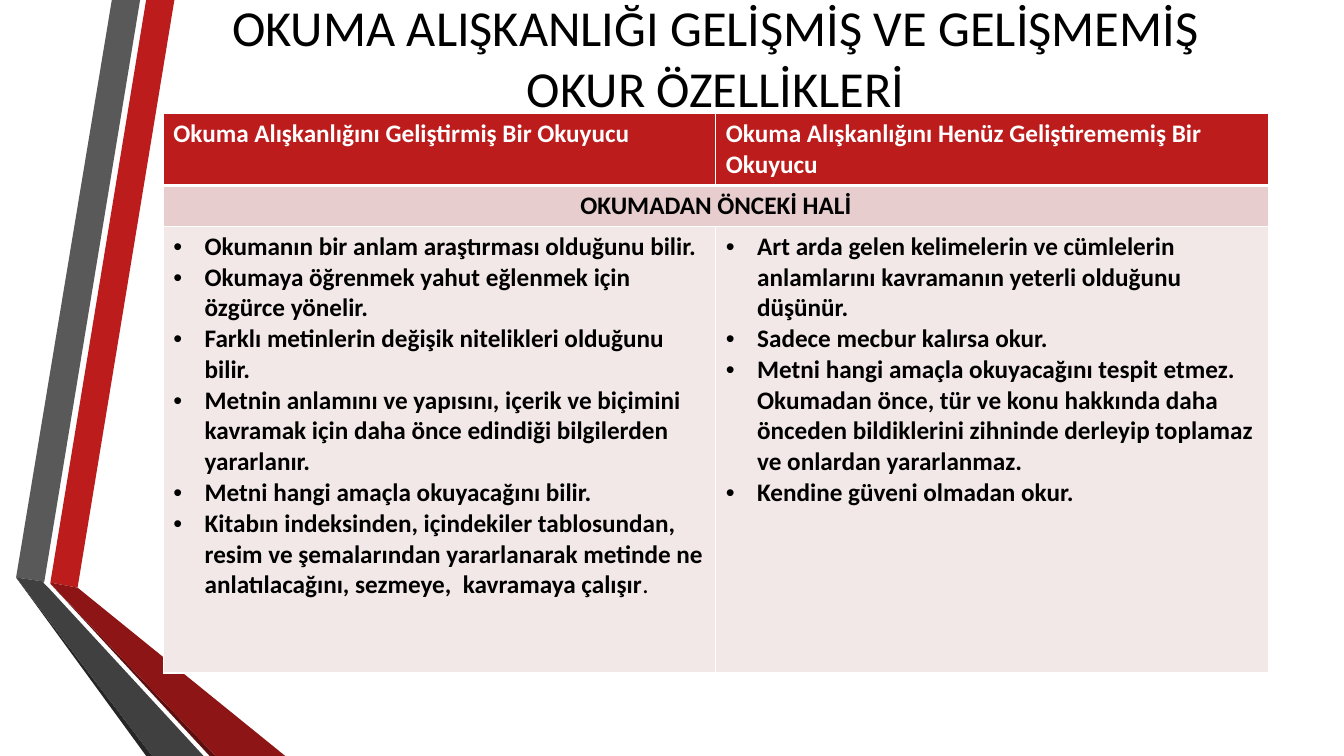
"""Build a slide comparing readers with and without a reading habit."""
import pptx
import pptx.util
import pptx.dml.color
import pptx.enum.text
import pptx.oxml.ns
from lxml import etree

Inches = pptx.util.Inches
Pt = pptx.util.Pt
RGBColor = pptx.dml.color.RGBColor
CENTER = pptx.enum.text.PP_ALIGN.CENTER

BLACK = RGBColor(0x00, 0x00, 0x00)
WHITE = RGBColor(0xFF, 0xFF, 0xFF)
RED = RGBColor(0xBC, 0x1C, 0x1C)
DARK_RED = RGBColor(0x8D, 0x15, 0x15)
DEEP_RED = RGBColor(0x5E, 0x0E, 0x0E)
GRAY = RGBColor(0x59, 0x59, 0x59)
DARK_GRAY = RGBColor(0x40, 0x40, 0x40)
DEEP_GRAY = RGBColor(0x26, 0x26, 0x26)
STAGE_PINK = RGBColor(0xE7, 0xCD, 0xCD)
BODY_PINK = RGBColor(0xF3, 0xE8, 0xE8)

FONT = "Calibri"
TITLE = "OKUMA ALIŞKANLIĞI GELİŞMİŞ VE GELİŞMEMİŞ OKUR ÖZELLİKLERİ"
STAGE = "OKUMADAN ÖNCEKİ HALİ"
HEADINGS = [
    "Okuma Alışkanlığını Geliştirmiş Bir Okuyucu",
    "Okuma Alışkanlığını Henüz Geliştirememiş Bir Okuyucu",
]
HABITS = [
    [
        "Okumanın bir anlam araştırması olduğunu bilir.",
        "Okumaya öğrenmek yahut eğlenmek için özgürce yönelir.",
        "Farklı metinlerin değişik nitelikleri olduğunu bilir.",
        "Metnin anlamını ve yapısını, içerik ve biçimini kavramak için daha "
        "önce edindiği bilgilerden yararlanır.",
        "Metni hangi amaçla okuyacağını bilir.",
        "Kitabın indeksinden, içindekiler tablosundan, resim ve şemalarından "
        "yararlanarak metinde ne anlatılacağını, sezmeye,  kavramaya çalışır",
    ],
    [
        "Art arda gelen kelimelerin ve cümlelerin anlamlarını kavramanın "
        "yeterli olduğunu düşünür.",
        "Sadece mecbur kalırsa okur.",
        "Metni hangi amaçla okuyacağını tespit etmez.  Okumadan önce, tür ve "
        "konu hakkında daha önceden bildiklerini zihninde derleyip toplamaz "
        "ve onlardan yararlanmaz.",
        "Kendine güveni olmadan okur.",
    ],
]
RIBBONS = [
    (RED, [(0.5, 5.78), (0.77, 5.83), (1.73, 0), (1.45, 0)]),
    (GRAY, [(1.39, 0), (1.11, 0), (0.16, 5.73), (0.44, 5.77)]),
    (DEEP_GRAY, [(0.16, 5.73), (1.45, 7.5), (1.51, 7.5)]),
    (DEEP_RED, [(0.5, 5.79), (2.08, 7.5), (2.14, 7.5)]),
    (DARK_RED, [(0.5, 5.79), (2.14, 7.5), (2.83, 7.5), (0.77, 5.83), (0.5, 5.78)]),
    (DARK_GRAY, [(2.02, 7.5), (0.48, 5.83), (0.43, 5.78), (0.44, 5.77),
                 (0.16, 5.73), (1.51, 7.5)]),
]


def add_ribbon(slide, color, corners):
    """Draw one flat piece of the folded ribbon."""
    points = [(Inches(x), Inches(y)) for x, y in corners]
    outline = slide.shapes.build_freeform(*points[0])
    outline.add_line_segments(points[1:], close=True)
    ribbon = outline.convert_to_shape()
    ribbon.shadow.inherit = False
    ribbon.fill.solid()
    ribbon.fill.fore_color.rgb = color
    ribbon.line.fill.background()


def add_run(paragraph, text, size, color, bold):
    """Append a formatted run to a paragraph."""
    run = paragraph.add_run()
    run.text = text
    run.font.name = FONT
    run.font.size = Pt(size)
    run.font.color.rgb = color
    run.font.bold = bold


def fill_title(slide):
    """Place and write the slide title."""
    title = slide.shapes.title
    title.left, title.top = Inches(1.62), Inches(0.21)
    title.width, title.height = Inches(10.96), Inches(0.71)
    frame = title.text_frame
    frame.word_wrap = True
    frame.auto_size = pptx.enum.text.MSO_AUTO_SIZE.NONE
    frame.vertical_anchor = pptx.enum.text.MSO_ANCHOR.MIDDLE
    frame.paragraphs[0].alignment = CENTER
    add_run(frame.paragraphs[0], TITLE, 36, BLACK, False)


def add_child(parent, tag, **attributes):
    """Append a DrawingML element."""
    return etree.SubElement(parent, pptx.oxml.ns.qn(tag), attributes)


def style_cell(cell, color, top=1, bottom=1):
    """Give a cell white borders and a solid fill."""
    properties = cell._tc.get_or_add_tcPr()
    for side, width in (("L", 1), ("R", 1), ("T", top), ("B", bottom)):
        border = add_child(properties, f"a:ln{side}", w=str(Pt(width)))
        add_child(add_child(border, "a:solidFill"), "a:srgbClr", val=str(WHITE))
    cell.fill.solid()
    cell.fill.fore_color.rgb = color


def add_bullet(paragraph):
    """Give a paragraph a hanging round bullet."""
    properties = paragraph._p.get_or_add_pPr()
    properties.set("marL", str(Inches(0.31)))
    properties.set("indent", str(Inches(-0.31)))
    add_child(properties, "a:buFont", typeface="Arial")
    add_child(properties, "a:buChar", char="•")


def write_habits(cell, habits):
    """Write a bulleted list of habits in a cell."""
    for index, habit in enumerate(habits):
        frame = cell.text_frame
        paragraph = frame.add_paragraph() if index else frame.paragraphs[0]
        add_bullet(paragraph)
        add_run(paragraph, habit, 18, BLACK, True)


def add_comparison(slide):
    """Add the table that compares the two readers."""
    comparison = slide.shapes.add_table(
        3, 2, Inches(1.62), Inches(1.13), Inches(10.96), Inches(5.53)).table
    for row, height in zip(comparison.rows, (0.7, 0.4, 4.43)):
        row.height = Inches(height)
    for column, (heading, habits) in enumerate(zip(HEADINGS, HABITS)):
        header, stage, body = (comparison.cell(row, column) for row in range(3))
        style_cell(header, RED, bottom=3)
        style_cell(stage, STAGE_PINK, top=3)
        style_cell(body, BODY_PINK)
        add_run(header.text_frame.paragraphs[0], heading, 18, WHITE, True)
        write_habits(body, habits)
    closing = comparison.cell(2, 0).text_frame.paragraphs[-1]
    add_run(closing, ".", 18, BLACK, False)
    stage = comparison.cell(1, 0)
    stage.merge(comparison.cell(1, 1))
    stage_line = stage.text_frame.paragraphs[0]
    stage_line.alignment = CENTER
    add_run(stage_line, STAGE, 18, BLACK, True)


def main():
    """Build and save the presentation."""
    presentation = pptx.Presentation()
    presentation.slide_width = Inches(13.33)
    presentation.slide_height = Inches(7.5)
    slide = presentation.slides.add_slide(presentation.slide_layouts[5])
    for color, corners in RIBBONS:
        add_ribbon(slide, color, corners)
    fill_title(slide)
    add_comparison(slide)
    presentation.save("out.pptx")


if __name__ == "__main__":
    main()
